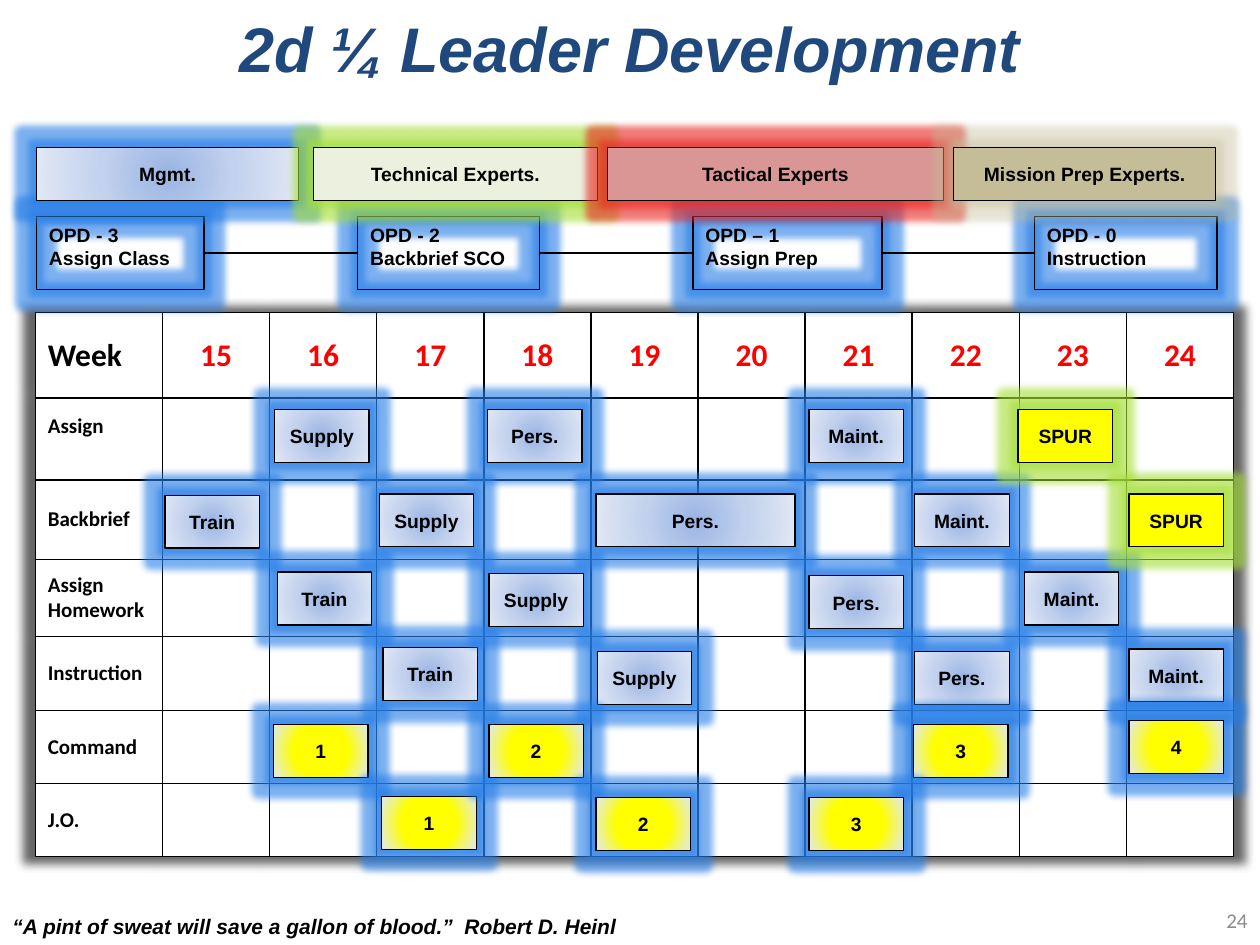
from dataclasses import dataclass
from typing import NamedTuple, Optional

from pptx import Presentation
from pptx.dml.color import RGBColor
from pptx.enum.shapes import MSO_CONNECTOR as Connector, MSO_SHAPE as Shape
from pptx.enum.text import MSO_ANCHOR as Anchor, PP_ALIGN as Align
from pptx.oxml import parse_xml
from pptx.oxml.ns import nsdecls, qn
from pptx.slide import Slide
from pptx.util import Inches, Pt

NS = nsdecls("a")


@dataclass(frozen=True)
class Theme:
    """Colours, fonts and type sizes of the slide."""
    black: str = "000000"
    white: str = "FFFFFF"
    navy: str = "1F497D"
    red: str = "FF0000"
    grey: str = "8C8C8C"
    yellow: str = "FFFF00"
    blue_glow: str = "257DE7"
    green_glow: str = "A4DF34"
    red_glow: str = "EA2620"
    tan_glow: str = "C4BD97"
    sans: str = "Arial"
    table_font: str = "Calibri"
    title_size: int = 36
    week_size: int = 18
    text_size: int = 12
    box_size: int = 11


T = Theme()
BLUE = ("9AB5E4", "C2D1ED", "E1E8F5")
GOLD = (T.yellow, T.yellow, "E1E8F5")


class Style(NamedTuple):
    """Fill stops and glow of a box; one stop is solid, none is empty."""
    stops: tuple
    glow: str
    alpha: int = 60


class Box(NamedTuple):
    """A labelled rectangle."""
    lines: tuple
    left: float
    top: float
    width: float
    height: float
    style: Style
    centred: bool = True


TASK = Style(BLUE, T.blue_glow)
COUNT = Style(GOLD, T.blue_glow)
SPUR = Style((T.yellow,), T.green_glow)
OPEN = Style((), T.blue_glow)

EXPERTS = [
    ("Mgmt.", 0.29, 2.08, TASK),
    ("Technical Experts.", 2.49, 2.25, Style(("EBF1DE",), T.green_glow)),
    ("Tactical Experts", 4.82, 2.67, Style(("D99694",), T.red_glow)),
    ("Mission Prep Experts.", 7.57, 2.08, Style(("C4BD97",), T.tan_glow, 40)),
]
BRIEFINGS = [
    ("OPD - 3", "Assign Class", 0.29, 1.33),
    ("OPD - 2", "Backbrief SCO", 2.84, 1.44),
    ("OPD – 1", "Assign Prep", 5.5, 1.5),
    ("OPD - 0", "Instruction", 8.21, 1.45),
]
EVENTS = [
    (TASK, "Train", [(1.31, 3.93), (2.2, 4.54), (3.04, 5.14)]),
    (TASK, "Supply", [(2.18, 3.25), (3.01, 3.92), (3.88, 4.55), (4.74, 5.17)]),
    (TASK, "Pers.", [(3.87, 3.25), (4.73, 3.92), (6.42, 4.57), (7.26, 5.17)]),
    (TASK, "Maint.", [(6.42, 3.25), (7.26, 3.92), (8.13, 4.54), (8.96, 5.15)]),
    (SPUR, "SPUR", [(8.08, 3.25), (8.96, 3.92)]),
    (COUNT, "1", [(2.17, 5.75), (3.03, 6.32)]),
    (COUNT, "2", [(3.88, 5.75), (4.73, 6.33)]),
    (COUNT, "3", [(7.25, 5.75), (6.42, 6.33)]),
    (COUNT, "4", [(8.96, 5.72)]),
]
WIDE_EVENT = ("Pers.", 4.73, 3.92)
WEEKS = range(15, 25)
ROWS = [("Week", 0.68), ("Assign", 0.65), ("Backbrief", 0.63),
        ("Assign Homework", 0.61), ("Instruction", 0.59),
        ("Command", 0.58), ("J.O.", 0.58)]


def rgb(value: str) -> RGBColor:
    """Turn a hex string into a colour."""
    return RGBColor.from_string(value)


def add_run(p, text: str, size: int, font: str = T.sans, color: str = T.black,
            bold: bool = True, italic: bool = False) -> None:
    """Add one formatted run to a paragraph."""
    r = p.add_run()
    r.text = text
    f = r.font
    f.size, f.name, f.bold, f.italic = Pt(size), font, bold, italic
    f.color.rgb = rgb(color)


def paint(s, stops: tuple) -> None:
    """Fill a shape with nothing, one colour or a radial gradient."""
    if len(stops) == 1:
        s.fill.solid()
        s.fill.fore_color.rgb = rgb(stops[0])
        return
    s.fill.background()
    if stops:
        gs = "".join(f'<a:gs pos="{i * 50000}"><a:srgbClr val="{c}"/></a:gs>'
                     for i, c in enumerate(stops))
        sp = s._element.spPr
        sp.replace(sp.find(qn("a:noFill")), parse_xml(
            f'<a:gradFill {NS} rotWithShape="1"><a:gsLst>{gs}</a:gsLst>'
            '<a:path path="circle"><a:fillToRect l="50000" t="50000" '
            'r="50000" b="50000"/></a:path></a:gradFill>'))


def draw_box(slide: Slide, box: Box) -> None:
    """Draw a glowing rectangle with its lines of text."""
    s = slide.shapes.add_shape(Shape.RECTANGLE, Inches(box.left), Inches(box.top),
                               Inches(box.width), Inches(box.height))
    paint(s, box.style.stops)
    s.line.color.rgb = rgb(T.black)
    s.line.width = Pt(0.75)
    s.shadow.inherit = False
    s._element.spPr.find(qn("a:effectLst")).append(parse_xml(
        f'<a:glow {NS} rad="101600"><a:srgbClr val="{box.style.glow}">'
        f'<a:alpha val="{box.style.alpha * 1000}"/></a:srgbClr></a:glow>'))
    tf = s.text_frame
    tf.vertical_anchor = Anchor.MIDDLE if box.centred else Anchor.TOP
    for i, line in enumerate(box.lines):
        p = tf.add_paragraph() if i else tf.paragraphs[0]
        p.alignment = Align.CENTER if box.centred else Align.LEFT
        add_run(p, line, T.box_size)


def draw_link(slide: Slide, start: float, end: float, y: float) -> None:
    """Draw a plain horizontal line."""
    s = slide.shapes.add_connector(Connector.STRAIGHT, Inches(start), Inches(y),
                                   Inches(end), Inches(y))
    s.line.color.rgb = rgb(T.black)
    s.line.width = Pt(1)
    s._element.spPr.append(parse_xml(f"<a:effectLst {NS}/>"))


def format_cell(cell) -> None:
    """Give a cell a white fill and thin black borders."""
    cell.fill.solid()
    cell.fill.fore_color.rgb = rgb(T.white)
    cell.vertical_anchor = Anchor.MIDDLE
    for i, side in enumerate("LRTB"):
        cell._tc.tcPr.insert(i, parse_xml(
            f'<a:ln{side} {NS} w="12700"><a:solidFill><a:srgbClr val="{T.black}"/>'
            f'</a:solidFill></a:ln{side}>'))


def draw_schedule(slide: Slide) -> None:
    """Draw the week grid with its soft shadow."""
    table = slide.shapes.add_table(len(ROWS), len(WEEKS) + 1, Inches(0.28), Inches(2.48),
                                   Inches(9.47), Inches(4.33)).table
    table.first_row = table.horz_banding = False
    table._tbl.tblPr.insert(0, parse_xml(
        f'<a:effectLst {NS}><a:outerShdw blurRad="63500" sx="102000" sy="102000" '
        f'algn="ctr" rotWithShape="0"><a:srgbClr val="{T.black}"><a:alpha val="60000"/>'
        '</a:srgbClr></a:outerShdw></a:effectLst>'))
    for i, col in enumerate(table.columns):
        col.width = Inches(0.85 if i else 1.01)
    for cell in table.iter_cells():
        format_cell(cell)
    for i, (label, height) in enumerate(ROWS):
        table.rows[i].height = Inches(height)
        add_run(table.cell(i, 0).text_frame.paragraphs[0], label,
                T.text_size if i else T.week_size, T.table_font)
    table.cell(1, 0).margin_bottom = Inches(0.25)
    for i, week in enumerate(WEEKS, 1):
        p = table.cell(0, i).text_frame.paragraphs[0]
        p.alignment = Align.CENTER
        add_run(p, str(week), T.week_size, T.table_font, T.red)


def draw_text(slide: Slide, text: str, at: tuple, align: Optional[Align] = None,
              anchor: Anchor = Anchor.TOP, **style) -> None:
    """Draw a wrapped one-line text box."""
    tf = slide.shapes.add_textbox(*map(Inches, at)).text_frame
    tf.word_wrap = True
    tf.vertical_anchor = anchor
    tf.paragraphs[0].alignment = align
    add_run(tf.paragraphs[0], text, T.text_size, **style)


def main() -> None:
    """Build and save the slide."""
    prs = Presentation()
    prs.slide_width, prs.slide_height = Inches(10), Inches(7.5)
    slide = prs.slides.add_slide(prs.slide_layouts[5])
    title = slide.shapes.title
    title.left, title.top, title.width, title.height = map(Inches, (0.5, 0, 9, 0.75))
    title.text_frame.vertical_anchor = Anchor.MIDDLE
    p = title.text_frame.paragraphs[0]
    p.alignment = Align.CENTER
    add_run(p, "2d ¼ Leader Development", T.title_size, color=T.navy, italic=True)

    draw_schedule(slide)
    for name, task, left, width in BRIEFINGS:
        draw_box(slide, Box((name, task), left, 1.72, width, 0.58, OPEN, False))
    for (*_, left, width), (*_, following, _) in zip(BRIEFINGS, BRIEFINGS[1:]):
        draw_link(slide, left + width, following, 2.01)
    for label, left, width, style in EXPERTS:
        draw_box(slide, Box((label,), left, 1.17, width, 0.42, style))
    for style, label, places in EVENTS:
        for left, top in places:
            width = 1.58 if (label, left, top) == WIDE_EVENT else 0.75
            draw_box(slide, Box((label,), left, top, width, 0.42, style))

    draw_text(slide, "24", (9.17, 7.1, 0.83, 0.4), Align.RIGHT, Anchor.MIDDLE,
              font=T.table_font, color=T.grey, bold=False)
    draw_text(slide, "“A pint of sweat will save a gallon of blood.”  Robert D. Heinl",
              (0, 7.2, 5.67, 0.3), italic=True)
    prs.save("out.pptx")


if __name__ == "__main__":
    main()
